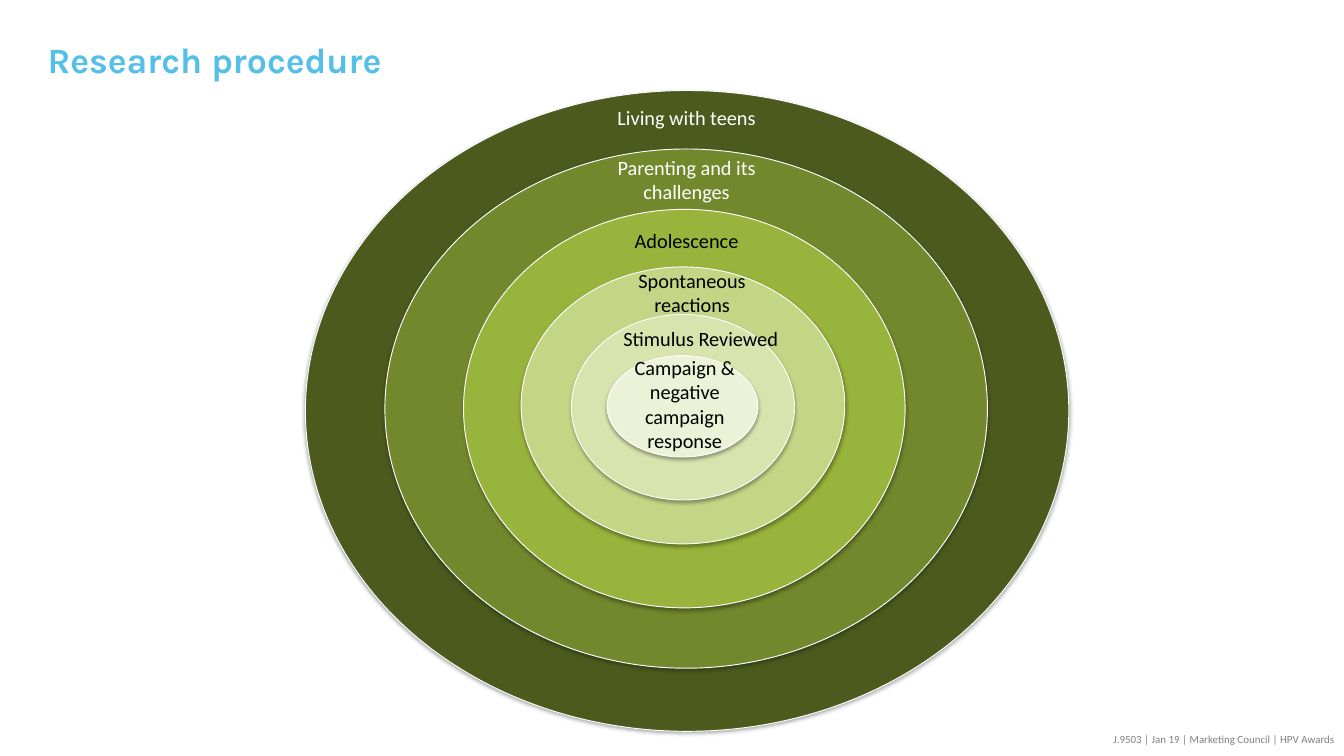
from dataclasses import dataclass

import pptx
import pptx.dml.color
import pptx.enum.shapes
import pptx.enum.text
import pptx.oxml
import pptx.oxml.ns
import pptx.util
from pptx.dml.color import RGBColor
from pptx.util import Inches, Pt

WHITE = RGBColor(0xFF, 0xFF, 0xFF)
BLACK = RGBColor(0x00, 0x00, 0x00)
GREY = RGBColor(0x80, 0x80, 0x80)
SKY = RGBColor(0x54, 0xC0, 0xE8)
MOSS = RGBColor(0x4C, 0x5A, 0x1E)
OLIVE = RGBColor(0x73, 0x87, 0x2D)
LEAF = RGBColor(0x99, 0xB4, 0x3C)
SAGE = RGBColor(0xC4, 0xD6, 0x86)
PALE = RGBColor(0xD8, 0xE4, 0xAE)
MIST = RGBColor(0xEB, 0xF2, 0xD7)

TOP = pptx.enum.text.MSO_ANCHOR.TOP
MIDDLE = pptx.enum.text.MSO_ANCHOR.MIDDLE
CENTER = pptx.enum.text.PP_ALIGN.CENTER
RIGHT = pptx.enum.text.PP_ALIGN.RIGHT

Area = tuple[float, float, float, float]  # left, top, width, height in inches


@dataclass
class Ring:
    area: Area
    fill: RGBColor
    label: str
    label_area: Area
    color: RGBColor = BLACK
    anchor: pptx.enum.text.MSO_ANCHOR = MIDDLE


# Rings from the outermost topic to the core
RINGS = [
    Ring((3.34, 0.99, 8.35, 7.01), MOSS, "Living with teens", (6.41, 1.1, 2.2, 0.37), WHITE),
    Ring((4.21, 1.63, 6.59, 5.68), OLIVE, "Parenting and its challenges", (6.41, 1.64, 2.2, 0.64), WHITE),
    Ring((5.07, 2.29, 4.83, 4.36), LEAF, "Adolescence", (6.41, 2.45, 2.2, 0.37)),
    Ring((5.7, 2.92, 3.54, 3.03), SAGE, "Spontaneous reactions", (6.54, 2.88, 2.06, 0.64), anchor=TOP),
    Ring((6.25, 3.44, 2.44, 2.03), PALE, "Stimulus Reviewed", (6.6, 3.52, 2.13, 0.37), anchor=TOP),
    Ring((6.64, 3.89, 1.65, 1.11), MIST, "Campaign & negative campaign response", (6.57, 3.83, 1.84, 1.18)),
]


def inches(area: Area) -> list[pptx.util.Length]:
    return [Inches(length) for length in area]


def add_shadow(shape) -> None:
    """Give the shape a soft shadow straight below it."""
    effects = pptx.oxml.parse_xml(
        f'<a:effectLst {pptx.oxml.ns.nsdecls("a")}>'
        f'<a:outerShdw blurRad="{Pt(3.1)}" dist="{Pt(1.8)}" dir="5400000" rotWithShape="0">'
        '<a:srgbClr val="000000"><a:alpha val="35000"/></a:srgbClr>'
        "</a:outerShdw></a:effectLst>"
    )
    shape.shadow.inherit = False
    properties = shape.element.spPr
    properties.replace(properties.find(pptx.oxml.ns.qn("a:effectLst")), effects)


def add_text(page, text: str, area: Area, size: float, color: RGBColor, align, anchor=TOP) -> None:
    frame = page.shapes.add_textbox(*inches(area)).text_frame
    frame.word_wrap = True
    frame.vertical_anchor = anchor
    para = frame.paragraphs[0]
    para.text = text
    para.alignment = align
    para.font.name = "Calibri"
    para.font.size = Pt(size)
    para.font.color.rgb = color


def add_ring(page, ring: Ring) -> None:
    oval = page.shapes.add_shape(pptx.enum.shapes.MSO_SHAPE.OVAL, *inches(ring.area))
    oval.fill.solid()
    oval.fill.fore_color.rgb = ring.fill
    oval.line.color.rgb = WHITE
    oval.line.width = Pt(0.75)
    add_shadow(oval)
    add_text(page, ring.label, ring.label_area, 16, ring.color, CENTER, ring.anchor)


def add_title(page, text: str) -> None:
    title = page.shapes.title
    title.left, title.top, title.width, title.height = inches((0.42, -0.04, 14.29, 1.38))
    title.text_frame.vertical_anchor = MIDDLE
    para = title.text_frame.paragraphs[0]
    para.text = text
    para.alignment = pptx.enum.text.PP_ALIGN.LEFT
    para.font.name = "Karla"
    para.font.size = Pt(28)
    para.font.bold = True
    para.font.color.rgb = SKY


def main() -> None:
    deck = pptx.Presentation()
    deck.slide_width, deck.slide_height = Inches(14.7), Inches(8.27)
    page = deck.slides.add_slide(deck.slide_layouts[5])

    # Footer and title
    add_text(page, "J.9503 | Jan 19 | Marketing Council | HPV Awards",
             (10.42, 7.96, 4.28, 0.25), 8.6, GREY, RIGHT)
    add_title(page, "Research procedure")

    # Nested rings
    for ring in RINGS:
        add_ring(page, ring)

    deck.save("out.pptx")


if __name__ == "__main__":
    main()
